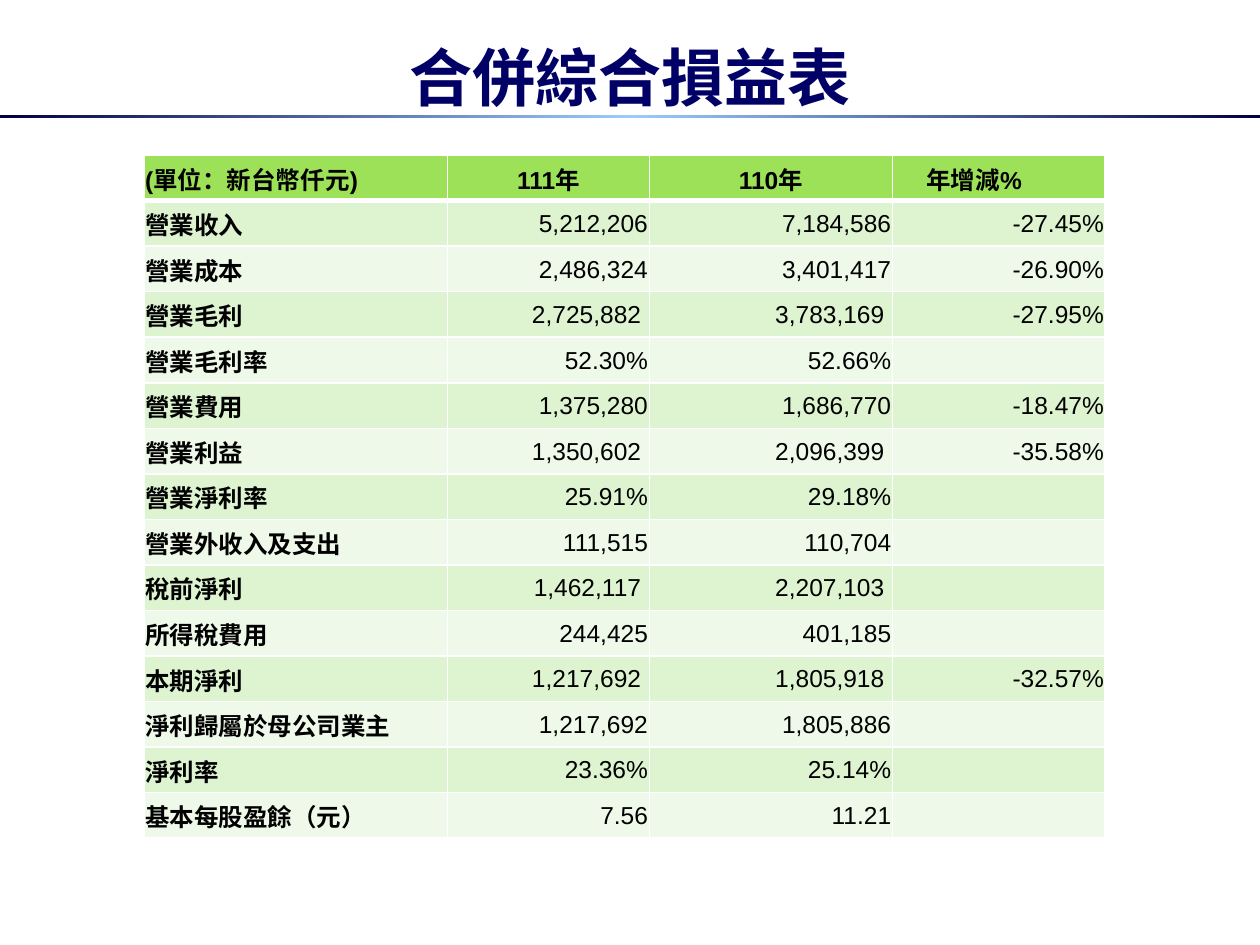
from copy import deepcopy
from typing import NamedTuple

from lxml import etree
from pptx import Presentation
from pptx.dml.color import RGBColor
from pptx.enum.shapes import MSO_SHAPE
from pptx.enum.text import MSO_ANCHOR, PP_ALIGN
from pptx.oxml.ns import qn
from pptx.util import Pt

LEFT, CENTER, RIGHT = PP_ALIGN.LEFT, PP_ALIGN.CENTER, PP_ALIGN.RIGHT
MIDDLE = MSO_ANCHOR.MIDDLE
RECTANGLE = MSO_SHAPE.RECTANGLE

TITLE_FONT, BODY_FONT = "Noto Sans CJK SC", "Arial"
HEADER_FILL, ODD_FILL, EVEN_FILL = "9CE157", "DEF4D1", "EFF9EA"
TABLE_LEFT, TABLE_TOP, ROW_HEIGHT = 82.2, 88.6, 26.05
COLUMN_WIDTHS = (173.6, 115.2, 139, 121.6)
INSET = 0.7
SUBTOTAL_INSET = 4.6  # sets the subtotals slightly in from the right
CHANGE_INSET = 19.4


class Item(NamedTuple):
    name: str
    current: str
    previous: str
    change: str = ""
    subtotal: bool = False


HEADERS = ("(單位：新台幣仟元)", "111年", "110年", "年增減%")
ITEMS = (
    Item("營業收入", "5,212,206", "7,184,586", "-27.45%"),
    Item("營業成本", "2,486,324", "3,401,417", "-26.90%"),
    Item("營業毛利", "2,725,882", "3,783,169", "-27.95%", True),
    Item("營業毛利率", "52.30%", "52.66%"),
    Item("營業費用", "1,375,280", "1,686,770", "-18.47%"),
    Item("營業利益", "1,350,602", "2,096,399", "-35.58%", True),
    Item("營業淨利率", "25.91%", "29.18%"),
    Item("營業外收入及支出", "111,515", "110,704"),
    Item("稅前淨利", "1,462,117", "2,207,103", subtotal=True),
    Item("所得稅費用", "244,425", "401,185"),
    Item("本期淨利", "1,217,692", "1,805,918", "-32.57%", True),
    Item("淨利歸屬於母公司業主", "1,217,692", "1,805,886"),
    Item("淨利率", "23.36%", "25.14%"),
    Item("基本每股盈餘（元）", "7.56", "11.21"),
)


def rgb(color: str) -> RGBColor:
    return RGBColor.from_string(color)


def format_paragraph(p, font: str, size: float, color: str, bold: bool, align) -> None:
    p.alignment = align
    p.font.name = font
    p.font.size = Pt(size)
    p.font.bold = bold
    p.font.color.rgb = rgb(color)


def add_title(s, text: str) -> None:
    sp = s.shapes.title
    sp.left, sp.top, sp.width, sp.height = Pt(54), Pt(18), Pt(612), Pt(51)
    tf = sp.text_frame
    tf.text = text
    tf.vertical_anchor = MIDDLE
    p = tf.paragraphs[0]
    format_paragraph(p, TITLE_FONT, 36, "000066", True, CENTER)
    etree.SubElement(p._p.pPr.find(qn("a:defRPr")), qn("a:ea"), typeface=TITLE_FONT)


def add_rule(s) -> None:
    sp = s.shapes.add_shape(RECTANGLE, Pt(0), Pt(66), Pt(720), Pt(1.6))
    sp.shadow.inherit = False
    sp.line.fill.background()
    sp.fill.gradient()
    sp.fill.gradient_angle = 0
    stops = sp._element.spPr.find(".//" + qn("a:gsLst"))
    stops.insert(1, deepcopy(stops[0]))
    for stop, position, color in zip(
        sp.fill.gradient_stops, (0, 0.5, 1), ("000044", "99CCFF", "000044")
    ):
        stop.position = position
        stop.color.rgb = rgb(color)


def set_borders(cell, bottom: float) -> None:
    tc_pr = cell._tc.get_or_add_tcPr()
    widths = {"a:lnL": 1, "a:lnR": 1, "a:lnT": 1, "a:lnB": bottom}
    for i, (tag, width) in enumerate(widths.items()):
        ln = etree.Element(qn(tag), w=str(Pt(width)))
        fill = etree.SubElement(ln, qn("a:solidFill"))
        etree.SubElement(fill, qn("a:srgbClr"), val="FFFFFF")
        tc_pr.insert(i, ln)


def fill_cell(cell, text: str, fill: str, bold: bool, align, left: float = INSET,
              right: float = INSET, bottom_border: float = 1) -> None:
    cell.fill.solid()
    cell.fill.fore_color.rgb = rgb(fill)
    cell.vertical_anchor = MIDDLE
    cell.margin_left, cell.margin_right = Pt(left), Pt(right)
    cell.margin_top, cell.margin_bottom = Pt(INSET), Pt(0)
    cell.text = text
    format_paragraph(cell.text_frame.paragraphs[0], BODY_FONT, 14, "000000", bold, align)
    set_borders(cell, bottom_border)


def add_income_table(s) -> None:
    rows = len(ITEMS) + 1
    table = s.shapes.add_table(
        rows, len(HEADERS), Pt(TABLE_LEFT), Pt(TABLE_TOP),
        Pt(sum(COLUMN_WIDTHS)), Pt(rows * ROW_HEIGHT),
    ).table
    for column, width in zip(table.columns, COLUMN_WIDTHS):
        column.width = Pt(width)
    for row in table.rows:
        row.height = Pt(ROW_HEIGHT)

    # Header row
    aligns = (LEFT, CENTER, CENTER, LEFT)
    insets = (INSET, INSET, INSET, CHANGE_INSET)
    for c, (text, align, left) in enumerate(zip(HEADERS, aligns, insets)):
        fill_cell(table.cell(0, c), text, HEADER_FILL, True, align, left, bottom_border=3)

    # Banded item rows
    for r, item in enumerate(ITEMS, start=1):
        fill = ODD_FILL if r % 2 else EVEN_FILL
        right = SUBTOTAL_INSET if item.subtotal else INSET
        fill_cell(table.cell(r, 0), item.name, fill, True, LEFT)
        fill_cell(table.cell(r, 1), item.current, fill, False, RIGHT, right=right)
        fill_cell(table.cell(r, 2), item.previous, fill, False, RIGHT, right=right)
        fill_cell(table.cell(r, 3), item.change, fill, False, RIGHT)


def main() -> None:
    prs = Presentation()
    prs.slide_width, prs.slide_height = Pt(720), Pt(540)
    s = prs.slides.add_slide(prs.slide_layouts[5])
    add_title(s, "合併綜合損益表")
    add_rule(s)
    add_income_table(s)
    prs.save("out.pptx")


if __name__ == "__main__":
    main()
